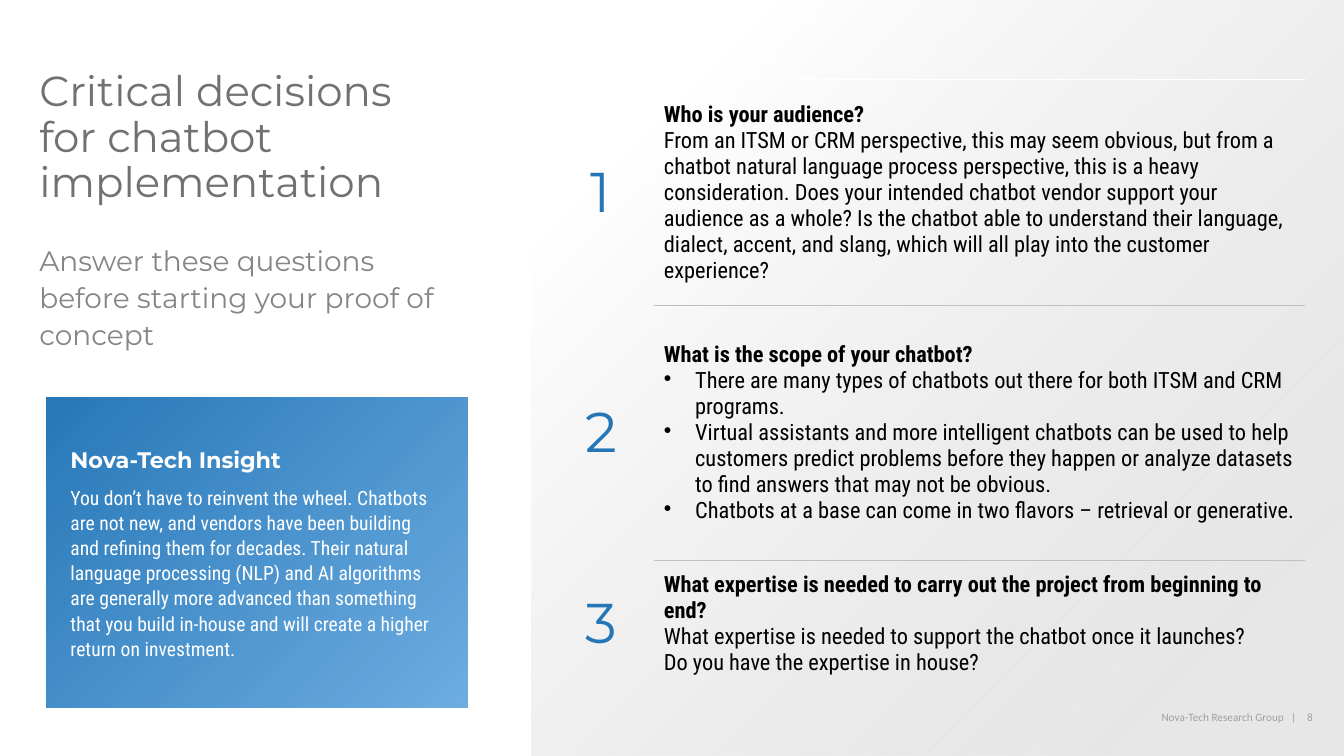
from lxml import etree
from pptx import Presentation
from pptx.dml.color import RGBColor
from pptx.enum import shapes, text
from pptx.oxml import ns
from pptx.util import Inches, Pt

COLORS = {
    "title": "717171", "subtitle": "848585", "footer": "A0A0A0",
    "blue": "2576B7", "light_blue": "6EAEE2", "white": "FFFFFF",
    "black": "000000", "panel": "D9D9D9", "rule": "BFBFBF",
}
HEADING, BODY = "Montserrat", "Roboto Condensed"
NO_STYLE = "{2D5ABB26-0587-4C30-8999-92F81FD0307C}"
ROW_HEIGHTS = [2.24, 2.53, 1.26]
QUESTIONS = [
    ("Who is your audience?", False, [
        "From an ITSM or CRM perspective, this may seem obvious, but from a chatbot natural "
        "language process perspective, this is a heavy consideration. Does your intended chatbot "
        "vendor support your audience as a whole? Is the chatbot able to understand their "
        "language, dialect, accent, and slang, which will all play into the customer experience?",
    ]),
    ("What is the scope of your chatbot?", True, [
        "There are many types of chatbots out there for both ITSM and CRM programs.",
        "Virtual assistants and more intelligent chatbots can be used to help customers predict "
        "problems before they happen or analyze datasets to find answers that may not be obvious.",
        "Chatbots at a base can come in two flavors – retrieval or generative.",
    ]),
    ("What expertise is needed to carry out the project from beginning to end?", False, [
        "What expertise is needed to support the chatbot once it launches?",
        "Do you have the expertise in house?",
    ]),
]
INSIGHT = (
    "You don’t have to reinvent the wheel. Chatbots are not new, and vendors have been building "
    "and refining them for decades. Their natural language processing (NLP) and AI algorithms "
    "are generally more advanced than something that you build in-house and will create a "
    "higher return on investment."
)


def rgb(name):
    return RGBColor.from_string(COLORS[name])


def write(p, content, font, size, color, bold=False):
    p.text = content
    p.font.name = font
    p.font.size = Pt(size)
    p.font.bold = bold
    p.font.color.rgb = rgb(color)
    return p


def set_frame(tf, inset=0):
    tf.word_wrap = True
    tf.margin_left = tf.margin_right = Inches(inset)
    tf.margin_top = tf.margin_bottom = Inches(inset)


def add_text(s, box, content, font, size, color):
    tf = s.shapes.add_textbox(*map(Inches, box)).text_frame
    set_frame(tf)
    return write(tf.paragraphs[0], content, font, size, color)


def add_gradient_box(s, box, stops):
    sp = s.shapes.add_shape(shapes.MSO_SHAPE.RECTANGLE, *map(Inches, box))
    sp.shadow.inherit = False
    sp.line.fill.background()
    sp.fill.gradient()
    sp.fill.gradient_angle = 315
    for stop, (position, color) in zip(sp.fill.gradient_stops, stops):
        stop.position = position
        stop.color.rgb = rgb(color)
    return sp


def add_panel(s):
    sp = add_gradient_box(s, (5.28, 0, 8.06, 7.5), [(0.15, "white"), (0.85, "panel")])
    last = sp._element.spPr.findall(".//" + ns.qn("a:srgbClr"))[-1]
    etree.SubElement(last, ns.qn("a:alpha"), val="64000")


def add_insight(s):
    sp = add_gradient_box(s, (0.35, 3.84, 4.4, 3.29), [(0, "blue"), (1, "light_blue")])
    sp.line.color.rgb = rgb("white")
    sp.line.width = Pt(14.75)
    tf = sp.text_frame
    set_frame(tf, 0.35)
    tf.vertical_anchor = text.MSO_ANCHOR.MIDDLE
    write(tf.paragraphs[0], "Nova-Tech Insight", HEADING, 16, "white", True)
    write(tf.add_paragraph(), INSIGHT, BODY, 14, "white").line_spacing = Pt(18)
    for p in tf.paragraphs:
        p.alignment = text.PP_ALIGN.LEFT
        p.space_before = Pt(8)


def add_bullet(p):
    pPr = p._p.get_or_add_pPr()
    pPr.set("marL", str(Inches(0.31)))
    pPr.set("indent", str(-Inches(0.31)))
    bullet = etree.Element(ns.qn("a:buChar"), char="•")
    pPr.insert_element_before(bullet, "a:tabLst", "a:defRPr", "a:extLst")


def set_border(cell, side, color, width):
    ln = etree.Element(ns.qn("a:ln" + side), w=str(Pt(width)))
    fill = etree.SubElement(ln, ns.qn("a:solidFill"))
    etree.SubElement(fill, ns.qn("a:srgbClr"), val=COLORS[color])
    cell._tc.get_or_add_tcPr().insert(0, ln)


def fill_question(cell, question, bulleted, answers):
    tf = cell.text_frame
    write(tf.paragraphs[0], question, BODY, 16, "black", True)
    for answer in answers:
        p = write(tf.add_paragraph(), answer, BODY, 16, "black")
        if bulleted:
            add_bullet(p)


def add_questions(s):
    box = map(Inches, (5.44, 0.79, 7.51, sum(ROW_HEIGHTS)))
    table = s.shapes.add_table(len(QUESTIONS), 2, *box).table
    table.first_row = table.horz_banding = False
    table._tbl.tblPr.find(ns.qn("a:tableStyleId")).text = NO_STYLE
    for column, width in zip(table.columns, (1.05, 6.46)):
        column.width = Inches(width)
    for i, question in enumerate(QUESTIONS):
        table.rows[i].height = Inches(ROW_HEIGHTS[i])
        number, detail = table.cell(i, 0), table.cell(i, 1)
        for cell in (number, detail):
            cell.fill.background()
            cell.vertical_anchor = text.MSO_ANCHOR.MIDDLE
        p = write(number.text_frame.paragraphs[0], str(i + 1), HEADING, 40, "blue")
        p.alignment = text.PP_ALIGN.CENTER
        fill_question(detail, *question)
        if i < len(QUESTIONS) - 1:
            set_border(detail, "B", "rule", 0.25)
        set_border(detail, "T", *(("rule", 0.25) if i else ("white", 1)))


def add_footer(s):
    p = add_text(s, (9.63, 7.05, 3.4, 0.13), "Nova-Tech Research Group", "Calibri", 8, "footer")
    p.alignment = text.PP_ALIGN.RIGHT
    divider = p.add_run()
    divider.text = " | "
    divider._r.get_or_add_rPr().set("spc", "300")
    p.add_run().text = "8"


def main():
    prs = Presentation()
    prs.slide_width, prs.slide_height = Inches(13.34), Inches(7.5)
    s = prs.slides.add_slide(prs.slide_layouts[6])
    add_panel(s)
    add_footer(s)
    p = add_text(s, (0.39, 2.38, 4.02, 1.89),
                 "Answer these questions before starting your proof of concept",
                 HEADING, 20, "subtitle")
    p.line_spacing = 1.1
    p.space_before = Pt(10)
    p = add_text(s, (0.39, 0.7, 3.85, 2.01),
                 "Critical decisions for chatbot implementation", HEADING, 30, "title")
    p.line_spacing = 0.9
    add_questions(s)
    add_insight(s)
    prs.save("out.pptx")


if __name__ == "__main__":
    main()
